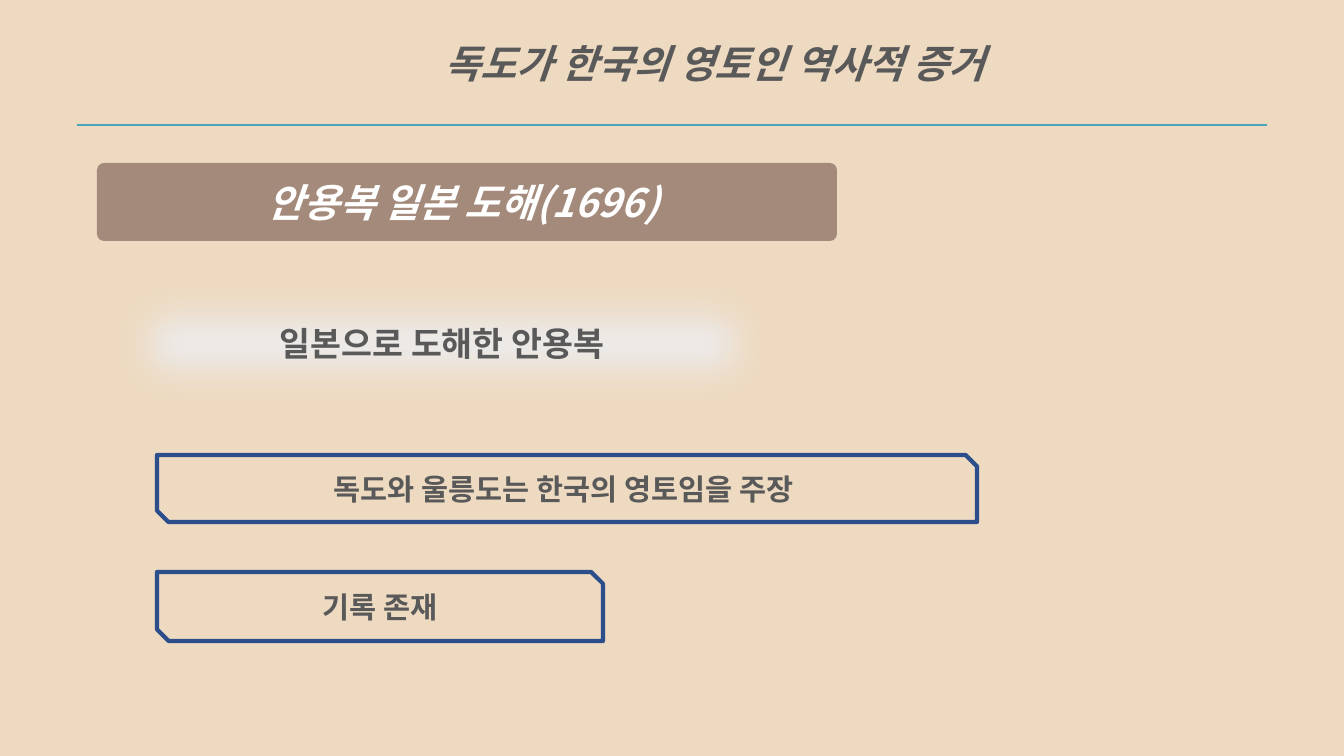
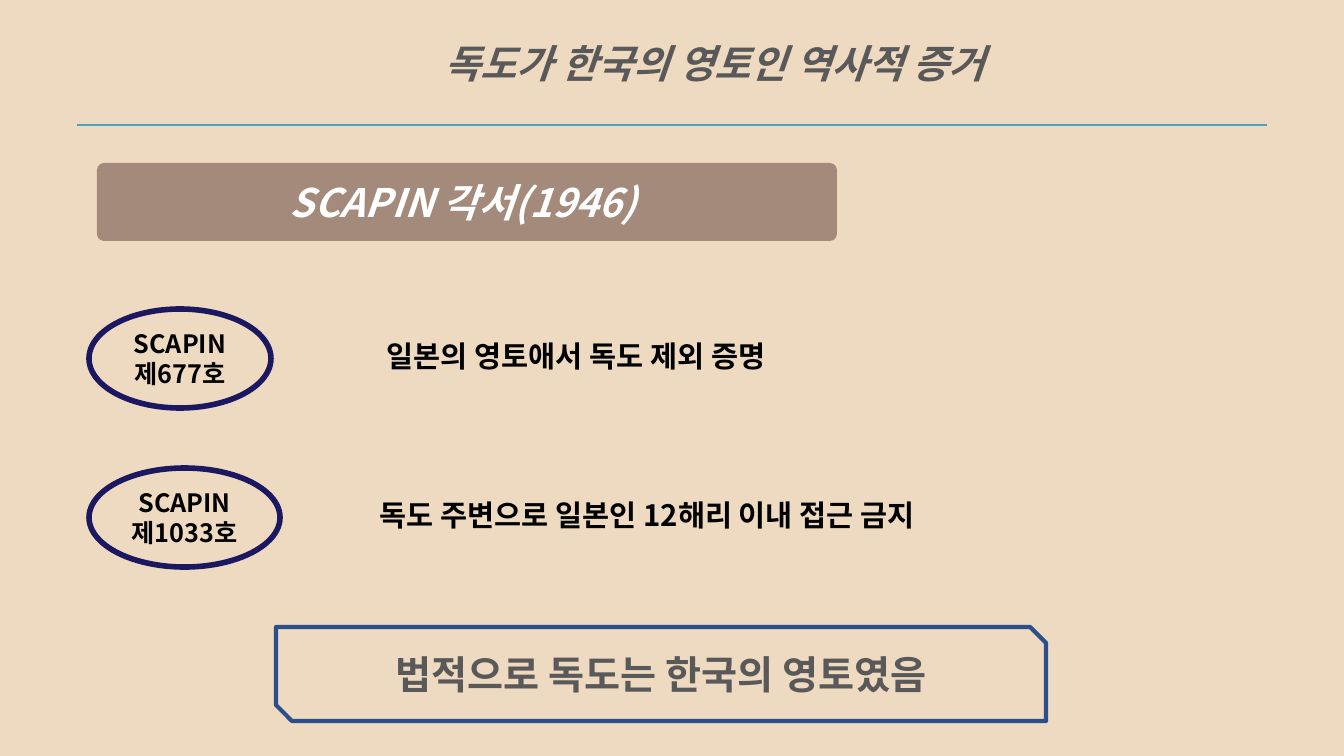
from dataclasses import dataclass

from lxml.etree import SubElement
from pptx import Presentation
from pptx.dml.color import RGBColor
from pptx.enum.shapes import MSO_CONNECTOR as Connector, MSO_SHAPE as Shape
from pptx.enum.text import MSO_ANCHOR as Anchor, MSO_AUTO_SIZE as AutoSize, PP_ALIGN as Align
from pptx.oxml.ns import qn
from pptx.util import Pt

# Shared look
PX = 12192000 / 1344
FONT = "Noto Sans CJK KR"
SAND, BROWN, TEAL = "EEDAC1", "A48A7B", "49A5BE"
NAVY, INDIGO = "2C4F8C", "1B1760"
GREY, BLACK, WHITE = "595959", "000000", "FFFFFF"
TITLE = "독도가 한국의 영토인 역사적 증거"


@dataclass(frozen=True)
class Box:
    left: int
    top: int
    width: int
    height: int

    def emu(self) -> tuple[int, ...]:
        return tuple(px(n) for n in (self.left, self.top, self.width, self.height))


@dataclass(frozen=True)
class TextStyle:
    size: int
    color: str = GREY
    italic: bool = False
    align: Align = Align.CENTER
    spacing: float = 1.0


@dataclass(frozen=True)
class PanelStyle:
    kind: Shape
    fill: str = SAND
    line: str | None = None
    weight: int = 1
    adjustments: tuple[float, ...] = ()
    soft_edge: int = 0


HEADING = TextStyle(28, italic=True, spacing=1.5)
BANNER_TEXT = TextStyle(28, WHITE, italic=True)
POINT = TextStyle(21)
FINDING = TextStyle(21, BLACK, align=Align.LEFT)
MEMO_TEXT = TextStyle(18, BLACK)

BANNER = PanelStyle(Shape.ROUNDED_RECTANGLE, BROWN, adjustments=(0.09,))
GLOW = PanelStyle(Shape.ROUNDED_RECTANGLE, "ECEBEB", "F2F2F2", soft_edge=25)
SNIPPED = PanelStyle(Shape.SNIP_2_DIAG_RECTANGLE, SAND, NAVY, 3, (0, 0.17))
MEMO = PanelStyle(Shape.OVAL, SAND, INDIGO, 4)


def px(length: int) -> int:
    return round(length * PX)


def rgb(color: str) -> RGBColor:
    return RGBColor.from_string(color)


def write(frame, text: str, style: TextStyle) -> None:
    """Fill a text frame, one paragraph per line of text."""
    frame.word_wrap = True
    frame.text = text
    for paragraph in frame.paragraphs:
        paragraph.alignment = style.align
        paragraph.line_spacing = style.spacing
        font = paragraph.font
        font.name, font.size = FONT, Pt(style.size)
        font.bold, font.italic = True, style.italic
        font.color.rgb = rgb(style.color)
        # Hangul takes its typeface from the East Asian font
        SubElement(paragraph._p.pPr.find(qn("a:defRPr")), qn("a:ea"), typeface=FONT)


def add_text(slide, box: Box, text: str, style: TextStyle) -> None:
    frame = slide.shapes.add_textbox(*box.emu()).text_frame
    write(frame, text, style)
    frame.auto_size = AutoSize.SHAPE_TO_FIT_TEXT


def add_panel(slide, box: Box, style: PanelStyle, text: str = "",
              text_style: TextStyle = POINT) -> None:
    panel = slide.shapes.add_shape(style.kind, *box.emu())
    panel.shadow.inherit = False
    for index, value in enumerate(style.adjustments):
        panel.adjustments[index] = value
    panel.fill.solid()
    panel.fill.fore_color.rgb = rgb(style.fill)
    if style.line:
        panel.line.color.rgb = rgb(style.line)
        panel.line.width = Pt(style.weight)
    else:
        panel.line.fill.background()
    if style.soft_edge:
        effects = panel._element.spPr.find(qn("a:effectLst"))
        SubElement(effects, qn("a:softEdge"), rad=str(Pt(style.soft_edge)))
    if text:
        write(panel.text_frame, text, text_style)
        panel.text_frame.vertical_anchor = Anchor.MIDDLE


def add_topic_slide(deck, topic: str):
    """Start a slide with the common title, rule and topic banner."""
    slide = deck.slides.add_slide(deck.slide_layouts[6])
    slide.background.fill.solid()
    slide.background.fill.fore_color.rgb = rgb(SAND)
    add_panel(slide, Box(97, 163, 740, 78), BANNER)
    add_text(slide, Box(383, 11, 663, 100), TITLE, HEADING)
    rule = slide.shapes.add_connector(Connector.STRAIGHT, px(77), px(125), px(1267), px(125))
    rule.line.color.rgb = rgb(TEAL)
    rule.line.width = Pt(1.5)
    SubElement(rule._element.spPr, qn("a:effectLst"))
    add_text(slide, Box(127, 173, 672, 57), topic, BANNER_TEXT)
    return slide


def build_voyage(deck) -> None:
    slide = add_topic_slide(deck, "안용복 일본 도해(1696)")
    add_panel(slide, Box(116, 284, 652, 118), GLOW, "일본으로 도해한 안용복", TextStyle(24))
    add_panel(slide, Box(157, 455, 820, 67), SNIPPED, "독도와 울릉도는 한국의 영토임을 주장 ")
    add_panel(slide, Box(157, 572, 446, 69), SNIPPED, "기록 존재")


def build_memoranda(deck) -> None:
    slide = add_topic_slide(deck, "SCAPIN 각서(1946)")
    # Each memorandum beside what it settled
    memoranda = (
        (Box(89, 309, 182, 99), "제677호",
         Box(377, 333, 516, 45), "일본의 영토애서 독도 제외 증명"),
        (Box(89, 468, 191, 99), "제1033호",
         Box(370, 492, 638, 45), "독도 주변으로 일본인 12해리 이내 접근 금지"),
    )
    for memo_box, number, finding_box, finding in memoranda:
        add_panel(slide, memo_box, MEMO, f"SCAPIN\n{number}", MEMO_TEXT)
        add_text(slide, finding_box, finding, FINDING)
    # Conclusion
    add_panel(slide, Box(276, 627, 770, 94), SNIPPED, "법적으로 독도는 한국의 영토였음", TextStyle(28))


def main() -> None:
    deck = Presentation()
    deck.slide_width, deck.slide_height = px(1344), px(756)
    build_voyage(deck)
    build_memoranda(deck)
    deck.save("out.pptx")


if __name__ == "__main__":
    main()
